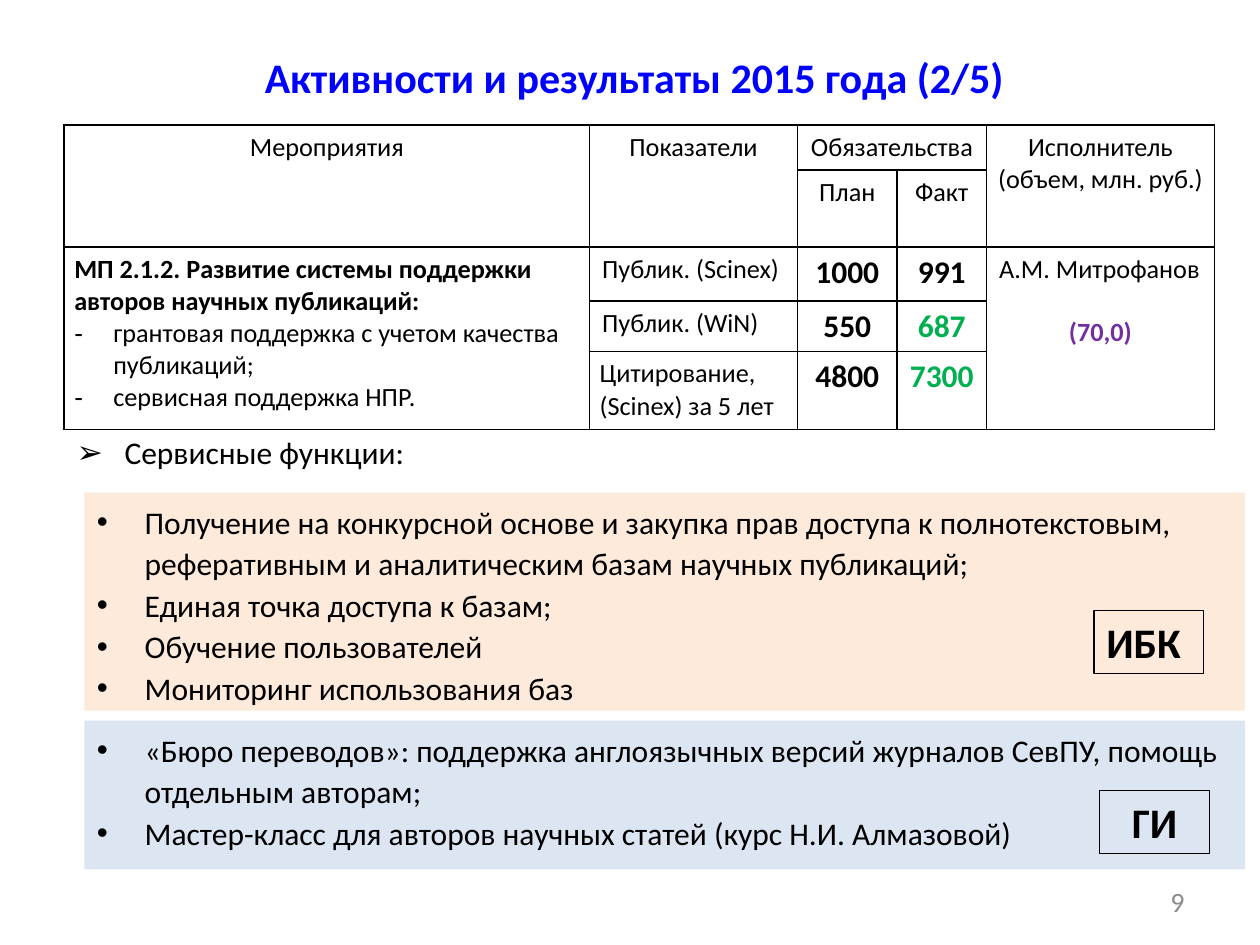
from lxml import etree
from pptx import Presentation
from pptx import util as u
from pptx.dml.color import RGBColor
from pptx.enum import shapes, text
from pptx.oxml.ns import qn

WIDTH, HEIGHT = 10, 7.5
BLACK, BLUE, GREEN, PURPLE, GREY = "000000", "0000FF", "00B050", "7030A0", "8C8C8C"
PEACH, PALE_BLUE = "FDEADA", "DCE6F2"
LEFT, CENTER, RIGHT = text.PP_ALIGN.LEFT, text.PP_ALIGN.CENTER, text.PP_ALIGN.RIGHT
TOP, MIDDLE = text.MSO_ANCHOR.TOP, text.MSO_ANCHOR.MIDDLE
TAG_SIZE = (0.87, 0.5)

COLUMN_WIDTHS = [4.17, 1.65, 0.79, 0.71, 1.81]
ROW_HEIGHTS = [0.36, 0.61, 0.43, 0.4, 0.62]
MERGES = [(0, 0, 1, 0), (0, 1, 1, 1), (0, 2, 0, 3), (0, 4, 1, 4),
          (2, 0, 4, 0), (2, 4, 4, 4)]
HEADERS = {
    (0, 0): ["Мероприятия"],
    (0, 1): ["Показатели"],
    (0, 2): ["Обязательства"],
    (0, 4): ["Исполнитель", "(объем, млн. руб.)"],
    (1, 2): ["План"],
    (1, 3): ["Факт"],
}
INDICATORS = [
    ("Публик. (Scinex)", "1000", "991", BLACK),
    ("Публик. (WiN)", "550", "687", GREEN),
    ("Цитирование, (Scinex) за 5 лет", "4800", "7300", GREEN),
]


def color(value):
    return RGBColor.from_string(value)


def add_text(frame, content, size=18, ink=BLACK, bold=False, align=LEFT,
             bullet=None, indent=0.38, spacing=None, before=0):
    """Append one paragraph, filling the first one while it is still empty."""
    first = frame.paragraphs[0]
    paragraph = frame.add_paragraph() if first.runs else first
    paragraph.alignment = align
    paragraph.space_before = u.Pt(before)
    if spacing:
        paragraph.line_spacing = spacing
    if bullet:
        properties = paragraph._p.get_or_add_pPr()
        properties.set("marL", str(u.Inches(indent)))
        properties.set("indent", str(-u.Inches(indent)))
        etree.SubElement(properties, qn("a:buFont"), typeface="Arial")
        etree.SubElement(properties, qn("a:buChar"), char=bullet)
    run = paragraph.add_run()
    run.text = content
    run.font.name = "Calibri"
    run.font.size = u.Pt(size)
    run.font.bold = bold
    run.font.color.rgb = color(ink)


def add_label(slide, box, content, anchor=TOP, **style):
    frame = slide.shapes.add_textbox(*map(u.Inches, box)).text_frame
    frame.word_wrap = True
    frame.vertical_anchor = anchor
    add_text(frame, content, **style)


def add_box(slide, box, fill=None, line=None):
    """Add a plain rectangle and return its text frame."""
    shape = slide.shapes.add_shape(shapes.MSO_SHAPE.RECTANGLE, *map(u.Inches, box))
    shape.shadow.inherit = False
    if fill:
        shape.fill.solid()
        shape.fill.fore_color.rgb = color(fill)
    else:
        shape.fill.background()
    if line:
        shape.line.color.rgb = color(line)
        shape.line.width = u.Pt(0.75)
    else:
        shape.line.fill.background()
    shape.text_frame.word_wrap = True
    shape.text_frame.vertical_anchor = TOP
    return shape.text_frame


def add_panel(slide, box, fill, items, tag, tag_at, tag_align):
    """Add a bulleted panel; tag_at is the tag's corner in shares of the panel."""
    left, top, width, height = box
    frame = add_box(slide, box, fill=fill)
    for item in items:
        add_text(frame, item, bullet="•", spacing=1.1)
    corner = (left + tag_at[0] * width, top + tag_at[1] * height)
    add_text(add_box(slide, (*corner, *TAG_SIZE), line=BLACK), tag,
             size=24, bold=True, align=tag_align)


def format_cell(cell):
    cell.fill.background()
    cell.margin_left = cell.margin_right = u.Inches(0.04)
    properties = cell._tc.get_or_add_tcPr()
    for position, side in enumerate(("a:lnL", "a:lnR", "a:lnT", "a:lnB")):
        border = etree.Element(qn(side), w=str(u.Pt(1)))
        fill = etree.SubElement(border, qn("a:solidFill"))
        etree.SubElement(fill, qn("a:srgbClr"), val=BLACK)
        properties.insert(position, border)


def add_activity_table(slide, box):
    table = slide.shapes.add_table(len(ROW_HEIGHTS), len(COLUMN_WIDTHS),
                                   *map(u.Inches, box)).table
    table.first_row = table.horz_banding = False
    for column, width in zip(table.columns, COLUMN_WIDTHS):
        column.width = u.Inches(width)
    for row, height in zip(table.rows, ROW_HEIGHTS):
        row.height = u.Inches(height)
    for cell in table.iter_cells():
        format_cell(cell)
    for top, left, bottom, right in MERGES:
        table.cell(top, left).merge(table.cell(bottom, right))

    for position, lines in HEADERS.items():
        for line in lines:
            add_text(table.cell(*position).text_frame, line, size=15, align=CENTER)

    activity = table.cell(2, 0)
    activity.margin_left = u.Inches(0.08)
    add_text(activity.text_frame, "МП 2.1.2. Развитие системы поддержки "
             "авторов научных публикаций:", size=15, bold=True)
    for item in ("грантовая поддержка с учетом качества публикаций;",
                 "сервисная поддержка НПР."):
        add_text(activity.text_frame, item, size=15, bullet="-", indent=0.31)

    for row, (name, plan, fact, ink) in enumerate(INDICATORS, start=2):
        indicator = table.cell(row, 1)
        indicator.margin_left = u.Inches(0.08 if row == 4 else 0.1)
        add_text(indicator.text_frame, name, size=15)
        add_text(table.cell(row, 2).text_frame, plan, bold=True, align=CENTER)
        add_text(table.cell(row, 3).text_frame, fact, ink=ink, bold=True, align=CENTER)

    performer = table.cell(2, 4)
    performer.margin_left = performer.margin_right = u.Inches(0.1)
    add_text(performer.text_frame, "А.М. Митрофанов", size=15)
    add_text(performer.text_frame, "(70,0)", size=15, ink=PURPLE, bold=True,
             align=CENTER, before=18)


def build_slide(presentation):
    slide = presentation.slides.add_slide(presentation.slide_layouts[6])
    add_label(slide, (0.35, 0.29, 9.37, 0.63), "Активности и результаты 2015 года (2/5)",
              anchor=MIDDLE, size=24, ink=BLUE, bold=True, align=CENTER)
    add_activity_table(slide, (0.51, 0.99, sum(COLUMN_WIDTHS), sum(ROW_HEIGHTS)))
    add_label(slide, (0.51, 3.36, 2.99, 0.47), "Сервисные функции:",
              bullet="➢", spacing=1.1)
    add_panel(slide, (0.67, 3.91, 9.21, 1.73), PEACH, [
        "Получение на конкурсной основе и закупка прав доступа к полнотекстовым, "
        "реферативным и аналитическим базам научных публикаций;",
        "Единая точка доступа к базам;",
        "Обучение пользователей",
        "Мониторинг использования баз",
    ], "ИБК", (0.87, 0.54), LEFT)
    add_panel(slide, (0.67, 5.72, 9.21, 1.18), PALE_BLUE, [
        "«Бюро переводов»: поддержка англоязычных версий журналов СевПУ, "
        "помощь отдельным авторам;",
        "Мастер-класс для авторов научных статей (курс Н.И. Алмазовой)",
    ], "ГИ", (0.875, 0.47), CENTER)
    add_label(slide, (7.17, 6.95, 2.33, 0.4), "9", anchor=MIDDLE,
              size=16, ink=GREY, align=RIGHT)


def main():
    presentation = Presentation()
    presentation.slide_width = u.Inches(WIDTH)
    presentation.slide_height = u.Inches(HEIGHT)
    build_slide(presentation)
    presentation.save("out.pptx")


if __name__ == "__main__":
    main()
